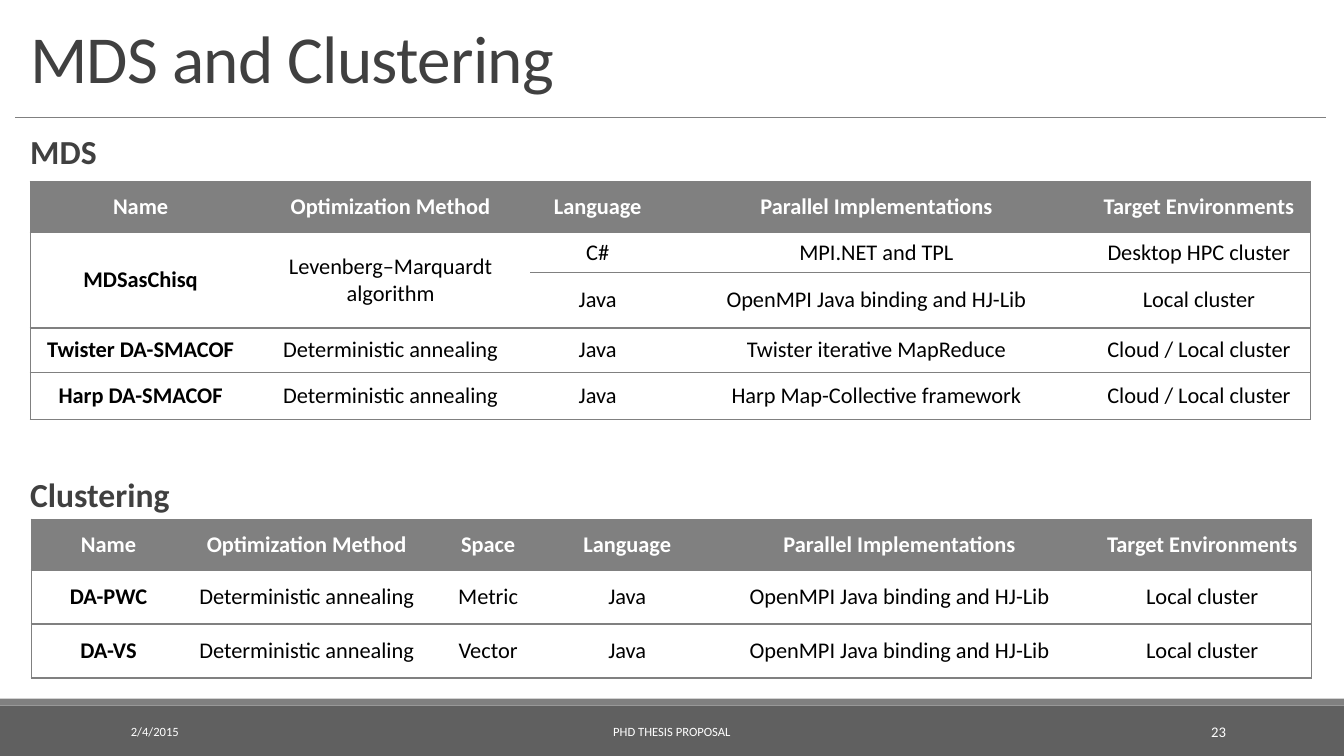
from dataclasses import dataclass

from lxml import etree
from pptx import Presentation
from pptx.dml import color as dml
from pptx.enum import shapes, text
from pptx.oxml import ns
from pptx.util import Pt

COLORS = {
    "rule": "808080",
    "band": "606060",
    "heading": "404040",
    "ink": "000000",
    "paper": "FFFFFF",
}
LEFT, CENTER, RIGHT = text.PP_ALIGN.LEFT, text.PP_ALIGN.CENTER, text.PP_ALIGN.RIGHT
TOP, MIDDLE, BOTTOM = text.MSO_ANCHOR.TOP, text.MSO_ANCHOR.MIDDLE, text.MSO_ANCHOR.BOTTOM


@dataclass
class Box:
    left: float
    top: float
    width: float
    height: float

    def lengths(self):
        return [Pt(v) for v in (self.left, self.top, self.width, self.height)]


@dataclass
class FooterItem:
    wording: str
    box: Box
    align: text.PP_ALIGN
    size: float


@dataclass
class MethodTable:
    left: float
    top: float
    widths: list[float]
    heights: list[float]
    rows: list[list[str]]
    tall_columns: tuple[int, ...] = ()


FOOTER = [
    FooterItem("2/4/2015", Box(86.4, 508.3, 194.4, 28.8), LEFT, 9),
    FooterItem("PHD THESIS PROPOSAL", Box(290.2, 508.3, 379.4, 28.8), CENTER, 9),
    FooterItem("23", Box(779.8, 508.3, 103, 28.8), RIGHT, 10.5),
]
MDS = MethodTable(
    21.6, 129.6,
    [157.7, 199.4, 96.5, 301.7, 159.1],
    [36.3, 28.8, 39.6, 31.7, 33.8],
    [
        ["Name", "Optimization Method", "Language", "Parallel Implementations", "Target Environments"],
        ["MDSasChisq", "Levenberg–Marquardt algorithm", "C#", "MPI.NET and TPL", "Desktop HPC cluster"],
        ["", "", "Java", "OpenMPI Java binding and HJ-Lib", "Local cluster"],
        ["Twister DA-SMACOF", "Deterministic annealing", "Java", "Twister iterative MapReduce", "Cloud / Local cluster"],
        ["Harp DA-SMACOF", "Deterministic annealing", "Java", "Harp Map-Collective framework", "Cloud / Local cluster"],
    ],
    tall_columns=(0, 1),
)
CLUSTERING = MethodTable(
    22.3, 370.8,
    [110.4, 172.8, 86.4, 112.3, 276.7, 155.8],
    [36.3, 38.6, 38.6],
    [
        ["Name", "Optimization Method", "Space", "Language", "Parallel Implementations", "Target Environments"],
        ["DA-PWC", "Deterministic annealing", "Metric", "Java", "OpenMPI Java binding and HJ-Lib", "Local cluster"],
        ["DA-VS", "Deterministic annealing", "Vector", "Java", "OpenMPI Java binding and HJ-Lib", "Local cluster"],
    ],
)


def rgb(name: str) -> dml.RGBColor:
    return dml.RGBColor.from_string(COLORS[name])


def write(frame, wording: str, *, size: float, color: str, bold: bool = False,
          align=LEFT, anchor=TOP, spacing: float = 1, before: float = 0,
          after: float = 0, tracking: int = 0):
    frame.word_wrap = True
    frame.vertical_anchor = anchor
    paragraph = frame.paragraphs[0]
    paragraph.alignment = align
    paragraph.line_spacing = spacing
    paragraph.space_before, paragraph.space_after = Pt(before), Pt(after)
    run = paragraph.add_run()
    run.text = wording
    run.font.name = "Calibri"
    run.font.size = Pt(size)
    run.font.bold = bold
    run.font.color.rgb = rgb(color)
    if tracking:
        run.font._element.set("spc", str(tracking))
    return paragraph


def place(holder, box: Box) -> None:
    holder.left, holder.top, holder.width, holder.height = box.lengths()
    holder.text_frame.auto_size = text.MSO_AUTO_SIZE.NONE


def add_heading(holder, wording: str) -> None:
    frame = holder.text_frame
    frame.margin_left = frame.margin_right = 0
    paragraph = write(frame, wording, size=24, color="heading", bold=True,
                      spacing=0.9, before=12, after=2)
    properties = paragraph._p.get_or_add_pPr()
    properties.set("marL", str(Pt(7.2)))
    properties.set("indent", "0")
    etree.SubElement(properties, ns.qn("a:buNone"))


def add_band(slide, box: Box, color: str) -> None:
    band = slide.shapes.add_shape(shapes.MSO_SHAPE.RECTANGLE, *box.lengths())
    band.shadow.inherit = False
    band.fill.solid()
    band.fill.fore_color.rgb = rgb(color)
    band.line.fill.background()


def set_borders(cell, visible: dict[str, bool]) -> None:
    properties = cell._tc.get_or_add_tcPr()
    for side, shown in visible.items():
        line = etree.SubElement(properties, ns.qn(f"a:ln{side}"), w=str(Pt(1)))
        if shown:
            fill = etree.SubElement(line, ns.qn("a:solidFill"))
            etree.SubElement(fill, ns.qn("a:srgbClr"), val=COLORS["rule"])
        else:
            etree.SubElement(line, ns.qn("a:noFill"))


def add_method_table(slide, methods: MethodTable) -> None:
    box = Box(methods.left, methods.top, sum(methods.widths), sum(methods.heights))
    count, last = len(methods.rows), len(methods.widths) - 1
    table = slide.shapes.add_table(count, last + 1, *box.lengths()).table
    table.horz_banding = False
    for column, width in zip(table.columns, methods.widths):
        column.width = Pt(width)
    for row, height in zip(table.rows, methods.heights):
        row.height = Pt(height)
    for c in methods.tall_columns:
        table.cell(1, c).merge(table.cell(2, c))
    for r, entries in enumerate(methods.rows):
        header = r == 0
        for c, entry in enumerate(entries):
            cell = table.cell(r, c)
            set_borders(cell, {"L": c == 0, "R": c == last, "T": not cell.is_spanned, "B": True})
            cell.fill.solid()
            cell.fill.fore_color.rgb = rgb("rule" if header else "paper")
            cell.margin_left = cell.margin_right = Pt(5)
            cell.margin_top = cell.margin_bottom = 0
            cell.vertical_anchor = MIDDLE
            if entry:
                write(cell.text_frame, entry, size=16, color="paper" if header else "ink",
                      bold=header or c == 0, align=CENTER, anchor=MIDDLE, after=4)


def main() -> None:
    deck = Presentation()
    deck.slide_width, deck.slide_height = Pt(960), Pt(540)
    slide = deck.slides.add_slide(deck.slide_layouts[1])

    add_band(slide, Box(0, 504, 960, 36), "band")
    add_band(slide, Box(0, 499, 960, 5), "rule")
    title_rule = slide.shapes.add_connector(
        shapes.MSO_CONNECTOR.STRAIGHT, Pt(10.8), Pt(83.7), Pt(947.5), Pt(83.7))
    title_rule.line.color.rgb = rgb("rule")
    title_rule.line.width = Pt(0.5)
    etree.SubElement(title_rule._element.spPr, ns.qn("a:effectLst"))

    title, mds_heading = slide.placeholders
    place(title, Box(14.4, 10.8, 931, 62.6))
    write(title.text_frame, "MDS and Clustering", size=48, color="heading",
          anchor=BOTTOM, spacing=0.85, tracking=-50)
    place(mds_heading, Box(14.4, 92.9, 931, 47.5))
    add_heading(mds_heading, "MDS")
    clustering_heading = slide.shapes.add_textbox(*Box(14.4, 338.4, 931, 47.5).lengths())
    add_heading(clustering_heading, "Clustering")

    for item in FOOTER:
        label = slide.shapes.add_textbox(*item.box.lengths())
        write(label.text_frame, item.wording, size=item.size, color="paper",
              align=item.align, anchor=MIDDLE)
    for methods in (MDS, CLUSTERING):
        add_method_table(slide, methods)
    deck.save("out.pptx")


if __name__ == "__main__":
    main()
